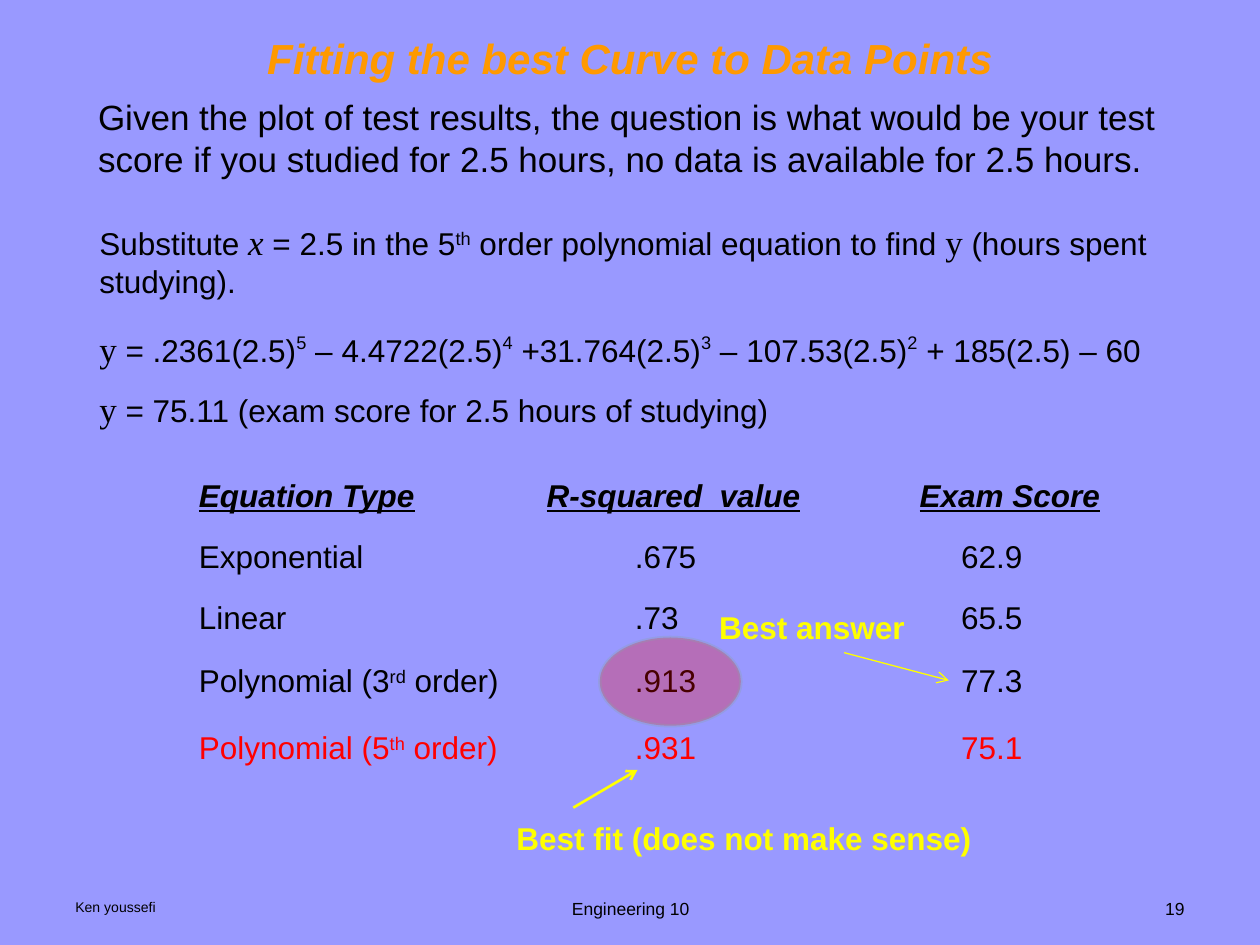
from dataclasses import dataclass

from lxml.etree import SubElement
from pptx import Presentation
from pptx.dml.color import RGBColor
from pptx.enum.shapes import MSO_CONNECTOR as Connector, MSO_SHAPE as Shape
from pptx.enum.text import PP_ALIGN as Align
from pptx.oxml.ns import qn
from pptx.util import Inches, Pt


@dataclass(frozen=True)
class Theme:
    background: str = "9999FF"
    text: str = "000000"
    title: str = "FF9900"
    accent: str = "FF0000"
    note: str = "FFFF00"
    outline: str = "89A4A7"
    font: str = "Arial"
    math_font: str = "Times New Roman"
    title_size: int = 24
    lead_size: int = 20
    body_size: int = 18
    footer_size: int = 10
    author_size: int = 8


THEME = Theme()
HEADING = {"bold": True, "italic": True, "underline": True}
VARIABLE = {"name": THEME.math_font, "size": Pt(THEME.lead_size)}
Y = ("y", VARIABLE)
X = ("x", {**VARIABLE, "italic": True})


def color(value):
    return RGBColor.from_string(value)


def raised(text, percent=30):
    return text, {"baseline": percent}


def add_span(para, part, size, fill, style):
    text, extra = (part, {}) if isinstance(part, str) else part
    span = para.add_run()
    span.text = text
    span.font.color.rgb = color(fill)
    settings = {"name": THEME.font, "size": Pt(size), **style, **extra}
    baseline = settings.pop("baseline", None)
    for name, value in settings.items():
        setattr(span.font, name, value)
    if baseline:
        span._r.get_or_add_rPr().set("baseline", str(baseline * 1000))


def add_text(page, place, *lines, size=THEME.body_size, fill=THEME.text,
             align=Align.LEFT, **style):
    box = page.shapes.add_textbox(*map(Inches, place))
    frame = box.text_frame
    frame.word_wrap = True
    for index, parts in enumerate(lines):
        para = frame.add_paragraph() if index else frame.paragraphs[0]
        para.alignment = align
        if index:
            para.space_before = Pt(10)
        for part in parts:
            add_span(para, part, size, fill, style)
    return box


def add_arrow(page, start, end, width):
    arrow = page.shapes.add_connector(
        Connector.STRAIGHT, *map(Inches, (*start, *end)))
    arrow.line.color.rgb = color(THEME.note)
    arrow.line.width = Pt(width)
    SubElement(arrow.line._get_or_add_ln(), qn("a:tailEnd"), type="arrow")
    SubElement(arrow._element.spPr, qn("a:effectLst"))


def set_alpha(fill, percent):
    tint = fill._xPr.find(qn("a:solidFill"))[0]
    SubElement(tint, qn("a:alpha"), val=str(percent * 1000))


def add_highlight(page, place):
    oval = page.shapes.add_shape(Shape.OVAL, *map(Inches, place))
    oval.shadow.inherit = False
    oval.fill.solid()
    oval.fill.fore_color.rgb = color(THEME.accent)
    set_alpha(oval.fill, 28)
    oval.line.color.rgb = color(THEME.outline)
    oval.line.width = Pt(2)
    set_alpha(oval.line.fill, 30)


def add_results(page):
    headings = (
        (1.48, 2.32, "Equation Type"),
        (4.24, 2.47, "R-squared  value"),
        (7.2, 1.86, "Exam Score"),
    )
    for left, width, heading in headings:
        add_text(page, (left, 3.73, width, 0.4), [heading], **HEADING)

    columns = ((1.48, 3.32), (4.94, 0.89), (7.53, 0.89))
    rows = (
        (4.21, THEME.text, ["Exponential"], [".675"], ["62.9"]),
        (4.7, THEME.text, ["Linear"], [".73"], ["65.5"]),
        (5.2, THEME.text, ["Polynomial (3", raised("rd"), " order)"],
         [".913"], ["77.3"]),
        (5.73, THEME.accent, ["Polynomial (5", raised("th"), " order)"],
         [".931"], ["75.1"]),
    )
    for top, fill, *cells in rows:
        for (left, width), cell in zip(columns, cells):
            add_text(page, (left, top, width, 0.4), cell, fill=fill)


def add_explanation(page):
    add_text(page, (0.68, 0.71, 8.73, 0.77),
             ["Given the plot of test results, the question is what would be "
              "your test score if you studied for 2.5 hours, no data is "
              "available for 2.5 hours."], size=THEME.lead_size)
    add_text(page, (0.69, 1.7, 8.58, 0.74),
             ["Substitute ", X, " = 2.5 in the 5", raised("th"),
              " order polynomial equation to find ", Y,
              " (hours spent studying)."])
    add_text(page, (0.69, 2.55, 9.08, 0.94),
             [Y, " = .2361(2.5)", raised("5", 42),
              " – 4.4722(2.5)", raised("4", 42),
              " +31.764(2.5)", raised("3", 42),
              " – 107.53(2.5)", raised("2", 42), " + 185(2.5) – 60"],
             [Y, " = 75.11 (exam score for 2.5 hours of studying)"])


def add_notes_on_results(page):
    add_text(page, (4, 6.45, 4.29, 0.4), ["Best fit (does not make sense)"],
             fill=THEME.note, bold=True)
    add_arrow(page, (4.55, 6.41), (5.06, 6.11), 1.5)
    add_highlight(page, (4.76, 5.06, 1.12, 0.7))
    add_text(page, (5.61, 4.78, 1.79, 0.4), ["Best answer"],
             fill=THEME.note, bold=True)
    add_arrow(page, (6.7, 5.18), (7.53, 5.4), 0.75)


def add_footer(page):
    add_text(page, (0.5, 7.08, 2.33, 0.27), ["Ken youssefi"],
             size=THEME.author_size)
    add_text(page, (3.42, 7.08, 3.17, 0.27), ["Engineering 10"],
             size=THEME.footer_size, align=Align.CENTER)
    add_text(page, (7.17, 7.08, 2.33, 0.27), ["19"],
             size=THEME.footer_size, align=Align.RIGHT)


def main():
    deck = Presentation()
    deck.slide_width, deck.slide_height = Inches(10), Inches(7.5)
    page = deck.slides.add_slide(deck.slide_layouts[6])
    page.background.fill.solid()
    page.background.fill.fore_color.rgb = color(THEME.background)

    add_footer(page)
    title = add_text(page, (0.5, 0.17, 9, 0.64),
                     ["Fitting the best Curve to Data Points"],
                     size=THEME.title_size, fill=THEME.title,
                     align=Align.CENTER, bold=True, italic=True)
    title.text_frame.margin_top = Inches(0.09)
    add_explanation(page)
    add_results(page)
    add_notes_on_results(page)
    deck.save("out.pptx")


if __name__ == "__main__":
    main()
